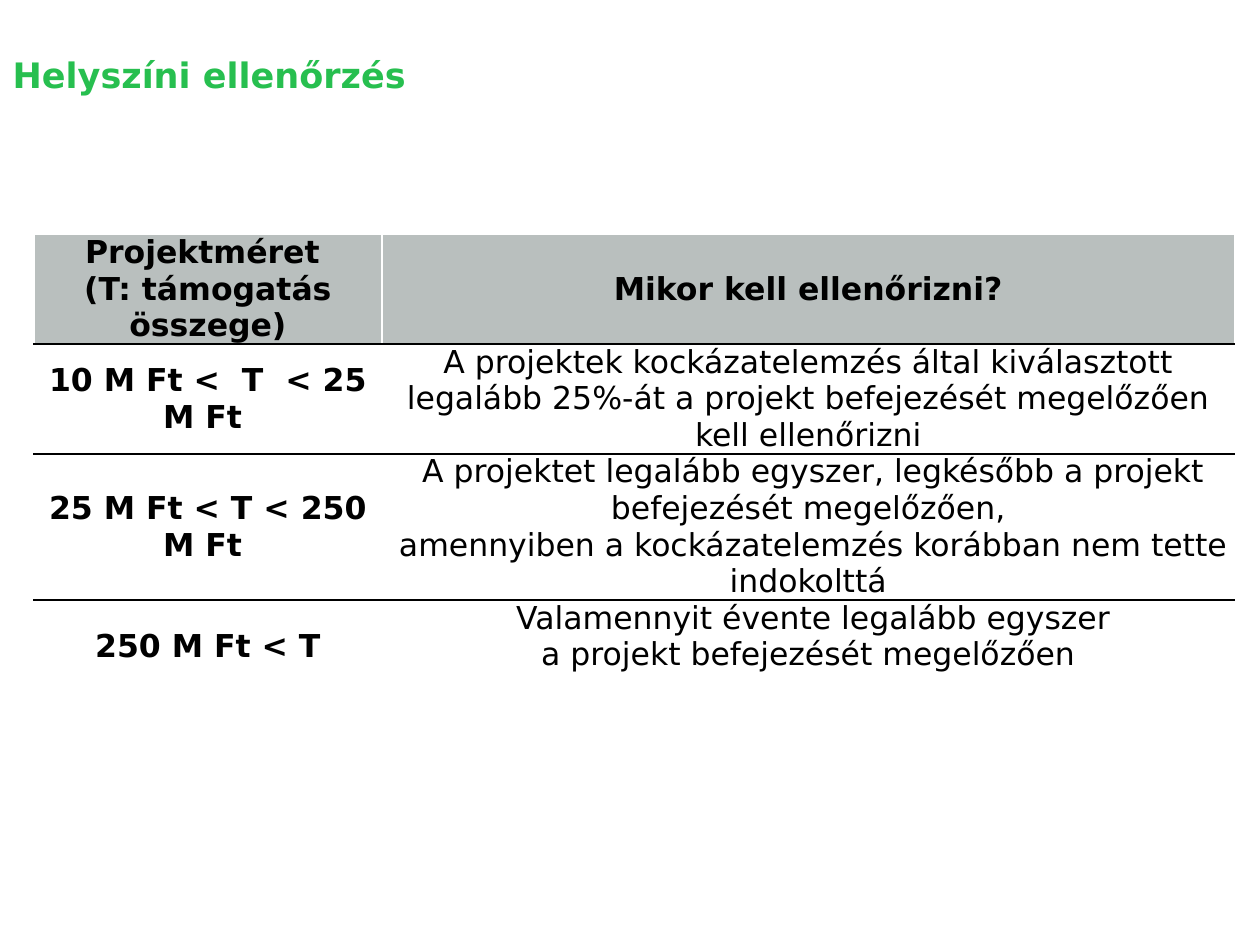
from dataclasses import dataclass

from lxml import etree
from pptx import Presentation
from pptx.dml.color import RGBColor
from pptx.enum.text import MSO_ANCHOR, PP_ALIGN
from pptx.oxml.ns import qn
from pptx.util import Inches, Pt

TOP, MIDDLE = MSO_ANCHOR.TOP, MSO_ANCHOR.MIDDLE
LEFT, CENTER = PP_ALIGN.LEFT, PP_ALIGN.CENTER
GREEN = RGBColor(0x27, 0xBF, 0x4F)
GREY = RGBColor(0xB9, 0xBF, 0xBE)
BLACK = RGBColor(0, 0, 0)
WHITE = RGBColor(255, 255, 255)
FONT = "DejaVu Sans"
TITLE_ONLY = 5
COLUMN_WIDTHS = (2.76, 6.77)
TABLE_LEFT, TABLE_TOP = 0.27, 1.86


@dataclass(frozen=True)
class Rule:
    size: str
    when: str
    height: float


RULES = (
    Rule("Projektméret \n(T: támogatás összege)", "Mikor kell ellenőrizni?", 0.76),
    Rule(
        "10 M Ft <  T  < 25 M Ft ",
        "A projektek kockázatelemzés által kiválasztott legalább 25%-át "
        "a projekt befejezését megelőzően kell ellenőrizni",
        0.81,
    ),
    Rule(
        "25 M Ft < T < 250 M Ft ",
        " A projektet legalább egyszer, legkésőbb a projekt befejezését megelőzően,\n"
        " amennyiben a kockázatelemzés korábban nem tette indokolttá",
        1.01,
    ),
    Rule(
        "250 M Ft < T",
        " Valamennyit évente legalább egyszer\n a projekt befejezését megelőzően ",
        0.74,
    ),
)


def style_font(font, size: int, color: RGBColor, bold: bool) -> None:
    font.name = FONT
    font.size = Pt(size)
    font.bold = bold
    font.color.rgb = color


def set_borders(cell, top: RGBColor, bottom: RGBColor) -> None:
    properties = cell._tc.get_or_add_tcPr()
    sides = {"lnL": WHITE, "lnR": WHITE, "lnT": top, "lnB": bottom}
    for position, (side, color) in enumerate(sides.items()):
        line = etree.Element(qn(f"a:{side}"), w=str(Pt(1)))
        fill = etree.SubElement(line, qn("a:solidFill"))
        etree.SubElement(fill, qn("a:srgbClr"), val=str(color))
        properties.insert(position, line)


def write_cell(cell, text: str, bold: bool, anchor, header: bool, last: bool) -> None:
    cell.text = text
    cell.margin_left = cell.margin_right = cell.margin_top = cell.margin_bottom = 0
    cell.vertical_anchor = anchor
    for paragraph in cell.text_frame.paragraphs:
        paragraph.alignment = CENTER
        style_font(paragraph.font, 18, BLACK, bold)
    if header:
        cell.fill.solid()
        cell.fill.fore_color.rgb = GREY
    else:
        cell.fill.background()
    set_borders(cell, WHITE if header else BLACK, WHITE if last else BLACK)


def add_title(slide, text: str) -> None:
    title = slide.shapes.title
    title.left, title.top = Inches(0), Inches(0.44)
    title.width, title.height = Inches(7.9), Inches(1.17)
    title.text_frame.text = text
    title.text_frame.vertical_anchor = TOP
    paragraph = title.text_frame.paragraphs[0]
    paragraph.alignment = LEFT
    paragraph.line_spacing = 0.8
    hanging = Inches(0.38)
    properties = paragraph._p.get_or_add_pPr()
    properties.set("marL", str(hanging))
    properties.set("indent", str(-hanging))
    style_font(paragraph.font, 20, GREEN, True)


def add_rules_table(slide, rules: tuple[Rule, ...]) -> None:
    table = slide.shapes.add_table(
        len(rules), len(COLUMN_WIDTHS), Inches(TABLE_LEFT), Inches(TABLE_TOP),
        Inches(sum(COLUMN_WIDTHS)), Inches(sum(rule.height for rule in rules)),
    ).table
    table.horz_banding = False
    for column, width in zip(table.columns, COLUMN_WIDTHS):
        column.width = Inches(width)
    for index, rule in enumerate(rules):
        header, last = index == 0, index == len(rules) - 1
        table.rows[index].height = Inches(rule.height)
        write_cell(table.cell(index, 0), rule.size, True, MIDDLE, header, last)
        write_cell(table.cell(index, 1), rule.when, header,
                   MIDDLE if header else TOP, header, last)


def main() -> None:
    presentation = Presentation()
    presentation.slide_width = Inches(10)
    presentation.slide_height = Inches(7.5)
    slide = presentation.slides.add_slide(presentation.slide_layouts[TITLE_ONLY])
    add_title(slide, "Helyszíni ellenőrzés")
    add_rules_table(slide, RULES)
    presentation.save("out.pptx")


if __name__ == "__main__":
    main()
